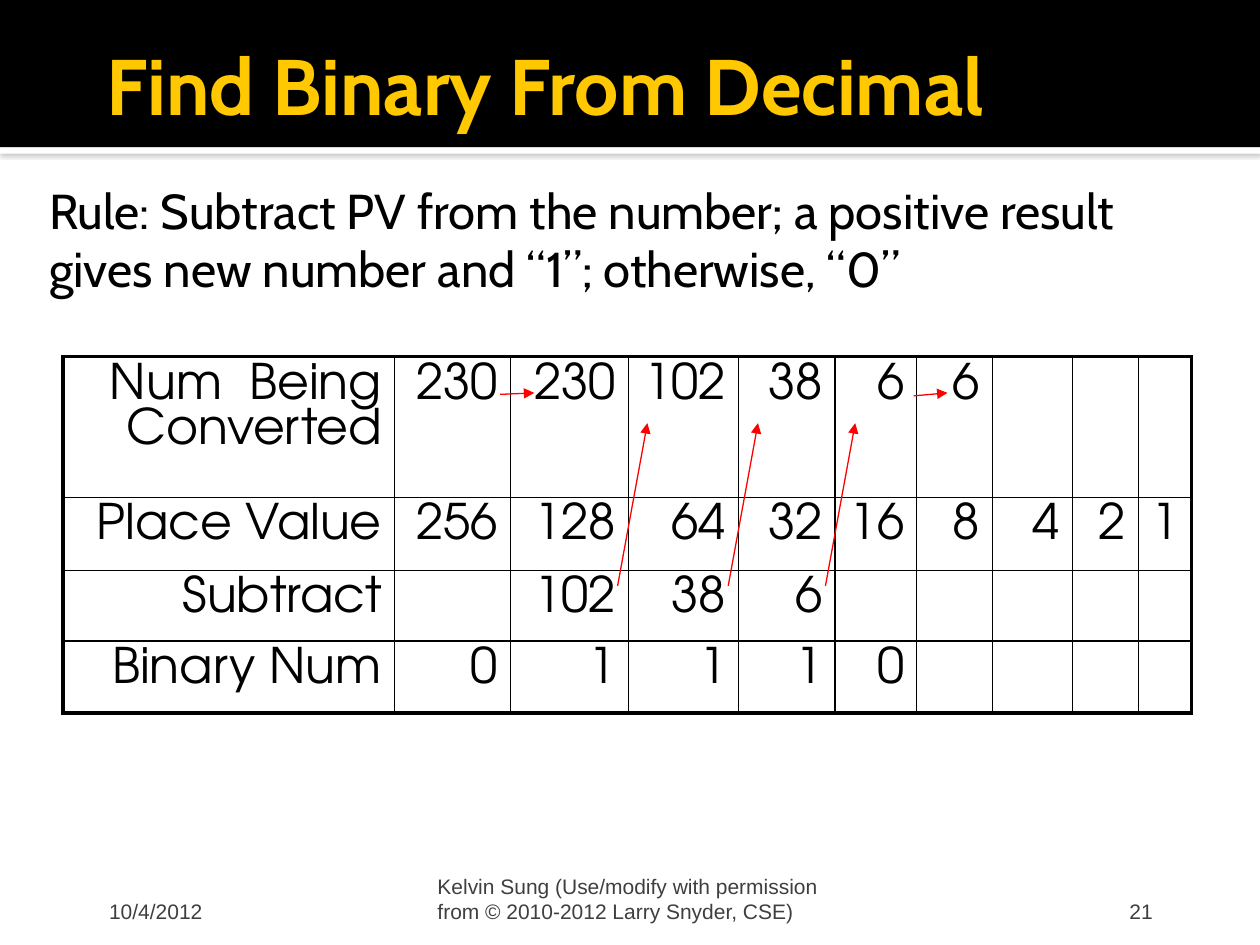
import pptx
import pptx.dml.color
import pptx.enum.shapes
import pptx.enum.text
import pptx.oxml
import pptx.oxml.ns
import pptx.util
from lxml import etree

Cm, Pt = pptx.util.Cm, pptx.util.Pt
PP_ALIGN, MSO_ANCHOR = pptx.enum.text.PP_ALIGN, pptx.enum.text.MSO_ANCHOR
NS = pptx.oxml.ns.nsdecls("a")

# Content
TITLE = "Find Binary From Decimal"
RULE = ("Rule: Subtract PV from the number; a positive result "
        "gives new number and “1”; otherwise, “0”")
ROWS = [
    ["Num  Being Converted", "230", "230", "102", "38", "6", "6", "", "", ""],
    ["Place Value", "256", "128", "64", "32", "16", "8", "4", "2", "1"],
    ["Subtract", "", "102", "38", "6", "", "", "", "", ""],
    ["Binary Num", "0", "1", "1", "1", "0", "", "", "", ""],
]
FOOTERS = [  # text, left, width, left and right inset, alignment
    ("21", 18.21, 5.28, 0.25, 0.25, PP_ALIGN.RIGHT),
    ("10/4/2012", 1.9, 5.28, 0.3, 0.13, PP_ALIGN.LEFT),
    ("Kelvin Sung (Use/modify with permission from © 2010-2012 Larry Snyder, CSE)",
     8.69, 8.05, 0.13, 0.13, PP_ALIGN.LEFT),
]

THEME = {
    "title": ("Cabin", 45, "FFC800"),
    "body": ("Cabin", 28, "000000"),
    "table": ("TeX Gyre Adventor", 28, "000000"),
    "footer": ("Arial", 12, "3F3F3F"),
    "band": "000000", "rule": "FFFFFF", "arrow": "FF0000", "border": "000000",
    "thin": 1, "thick": 2.25,
}

# Geometry in cm
SLIDE_W, SLIDE_H, BAND_H, RULE_H = 25.4, 19.05, 2.97, 0.13
TITLE_BOX = (1.9, 0.43, 21.59, 2.54)
BODY_BOX = (0.84, 3.38, 23.72, 11.43)
FOOTER_TOP, FOOTER_H = 17.35, 1.27
TABLE_AT = (1.27, 7.19)
COL_W = [6.68, 2.34, 2.38, 2.22, 1.94, 1.65, 1.53, 1.61, 1.33, 1.07]
ROW_H = [2.84, 1.47, 1.42, 1.45]
CARRY_ARROWS = [(10.08, 7.95, 10.77, 7.92), (18.42, 7.98, 19.1, 7.92)]
RESULT_ARROWS = [(x, 11.81, x + 0.6, 8.53) for x in (12.45, 14.68, 16.64)]


def rgb(value):
    return pptx.dml.color.RGBColor.from_string(value)


def write(tf, text, style, align=PP_ALIGN.LEFT, bold=False):
    tf.text = text
    p = tf.paragraphs[0]
    p.alignment = align
    for r in p.runs:
        name, size, color = THEME[style]
        r.font.name, r.font.size, r.font.bold = name, Pt(size), bold
        r.font.color.rgb = rgb(color)
    return p


def frame(sp, insets, anchor):
    tf = sp.text_frame
    tf.word_wrap, tf.vertical_anchor = True, anchor
    tf.auto_size = pptx.enum.text.MSO_AUTO_SIZE.NONE
    tf.margin_left, tf.margin_top, tf.margin_right, tf.margin_bottom = map(Cm, insets)
    return tf


def place(sp, box):
    sp.left, sp.top, sp.width, sp.height = map(Cm, box)


def add_band(s, index, top, height, color):
    sp = s.shapes.add_shape(pptx.enum.shapes.MSO_SHAPE.RECTANGLE,
                            0, Cm(top), Cm(SLIDE_W), Cm(height))
    sp.shadow.inherit = False
    sp.fill.solid()
    sp.fill.fore_color.rgb = rgb(color)
    sp.line.fill.background()
    s.shapes._spTree.insert(index, sp._element)  # behind the placeholders
    return sp


def add_border(cell, row, col):
    outer = {"L": col == 0, "R": col == len(COL_W) - 1,
             "T": row == 0, "B": row == len(ROW_H) - 1}
    tcPr = cell._tc.get_or_add_tcPr()
    for side, is_outer in outer.items():
        width = Pt(THEME["thick" if is_outer else "thin"])
        tcPr.append(pptx.oxml.parse_xml(
            f'<a:ln{side} {NS} w="{width}"><a:solidFill><a:srgbClr '
            f'val="{THEME["border"]}"/></a:solidFill></a:ln{side}>'))


def add_arrow(s, ends):
    line = s.shapes.add_connector(pptx.enum.shapes.MSO_CONNECTOR.STRAIGHT, *map(Cm, ends))
    line.line.color.rgb = rgb(THEME["arrow"])
    line.line.width = Pt(0.75)
    ln = line.line._get_or_add_ln()
    etree.SubElement(ln, pptx.oxml.ns.qn("a:tailEnd"), type="triangle")
    etree.SubElement(line._element.spPr, pptx.oxml.ns.qn("a:effectLst"))


def main():
    prs = pptx.Presentation()
    prs.slide_width, prs.slide_height = Cm(SLIDE_W), Cm(SLIDE_H)
    s = prs.slides.add_slide(prs.slide_layouts[1])

    # Header band with a shadowed white rule under it
    rule = add_band(s, 2, BAND_H, RULE_H, THEME["rule"])
    effects = rule._element.spPr.find(pptx.oxml.ns.qn("a:effectLst"))
    effects.append(pptx.oxml.parse_xml(
        f'<a:outerShdw {NS} blurRad="{Pt(2.5)}" dist="{Pt(0.8)}" dir="5400000">'
        '<a:srgbClr val="808080"><a:alpha val="60000"/></a:srgbClr></a:outerShdw>'))
    add_band(s, 3, 0, BAND_H, THEME["band"])

    # Title and rule text
    title, body = s.placeholders
    place(title, TITLE_BOX)
    write(frame(title, (0.25, 0.13, 0.13, 0.13), MSO_ANCHOR.MIDDLE),
          TITLE, "title", bold=True)
    place(body, BODY_BOX)
    p = write(frame(body, (0.15, 0.25, 0.25, 0.13), MSO_ANCHOR.TOP), RULE, "body")
    pPr = p._p.get_or_add_pPr()
    pPr.set("marL", "0")
    pPr.set("indent", "0")
    etree.SubElement(pPr, pptx.oxml.ns.qn("a:buNone"))

    # Conversion table
    table = s.shapes.add_table(len(ROW_H), len(COL_W), *map(Cm, TABLE_AT),
                               Cm(sum(COL_W)), Cm(sum(ROW_H))).table
    table.first_row = table.horz_banding = False
    for column, width in zip(table.columns, COL_W):
        column.width = Cm(width)
    for i, (height, texts) in enumerate(zip(ROW_H, ROWS)):
        table.rows[i].height = Cm(height)
        for j, text in enumerate(texts):
            cell = table.cell(i, j)
            add_border(cell, i, j)
            cell.fill.background()
            write(cell.text_frame, text, "table", PP_ALIGN.RIGHT)

    # Arrows that carry each number to the next column
    for ends in CARRY_ARROWS + RESULT_ARROWS:
        add_arrow(s, ends)

    # Footer
    for text, left, width, inset_l, inset_r, align in FOOTERS:
        sp = s.shapes.add_textbox(Cm(left), Cm(FOOTER_TOP), Cm(width), Cm(FOOTER_H))
        tf = frame(sp, (inset_l, 0.13, inset_r, 0), MSO_ANCHOR.BOTTOM)
        write(tf, text, "footer", align)

    prs.save("out.pptx")


if __name__ == "__main__":
    main()
